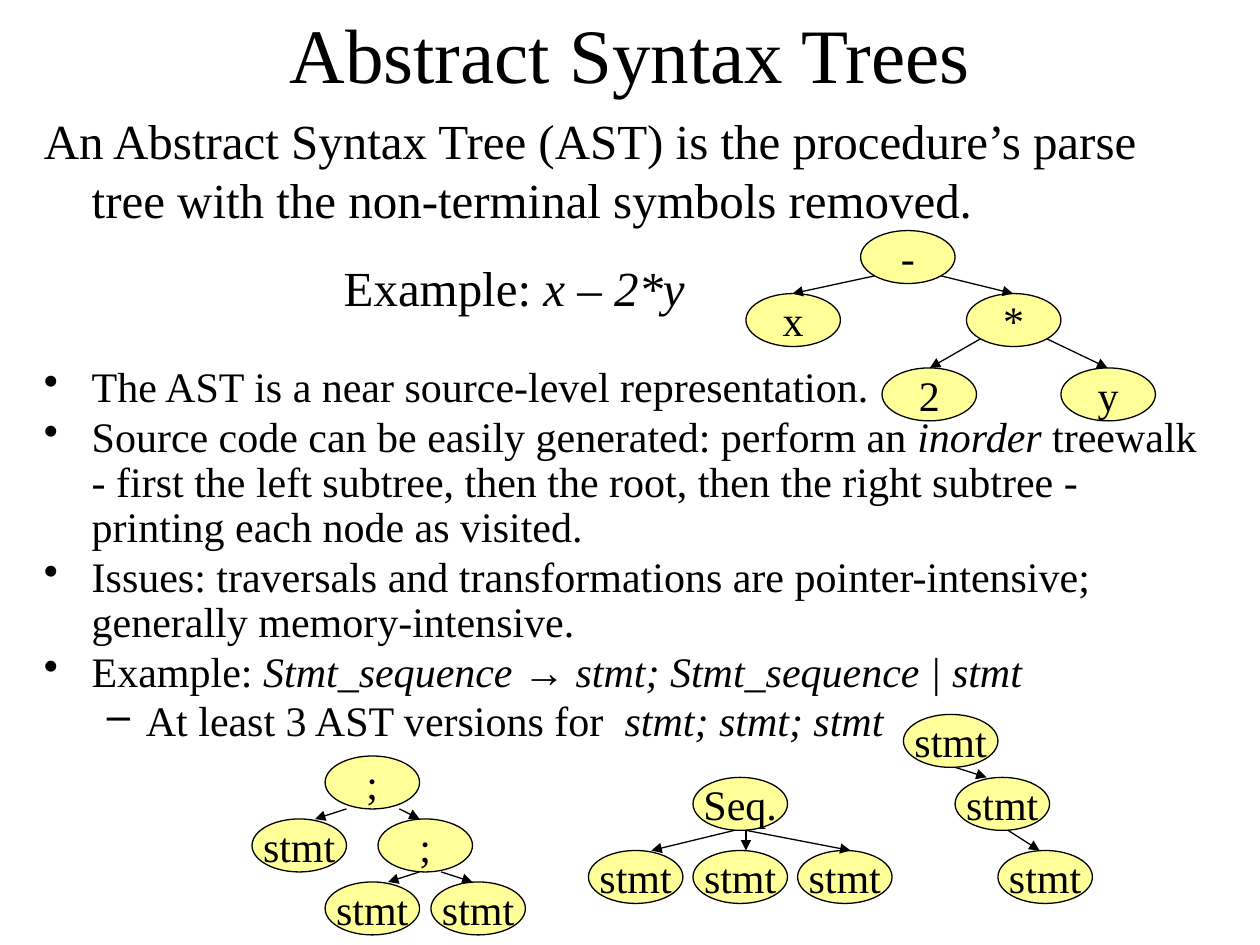
"""Build a slide on abstract syntax trees with four small tree diagrams."""
from dataclasses import dataclass

import pptx
import pptx.dml.color
import pptx.enum.shapes
import pptx.enum.text
import pptx.oxml.ns
import pptx.util
from lxml import etree
from pptx.util import Inches, Pt


@dataclass(frozen=True)
class Theme:
    """Font, colours and type sizes of the slide."""
    font: str = "Times New Roman"
    ink: str = "000000"
    node_fill: str = "FFFF99"
    title: int = 44
    lead: int = 28
    body: int = 24
    line: float = 0.75


@dataclass(frozen=True)
class Tree:
    """Nodes as (label, left, top); edges as (parent, child, start x, end x)."""
    nodes: tuple
    edges: tuple
    inset: float = 0


THEME = Theme()
NODE_WIDTH, NODE_HEIGHT = 0.75, 0.42

TREES = (
    Tree(
        (("-", 6.83, 1.83), ("x", 5.92, 2.33), ("*", 7.67, 2.33),
         ("2", 7, 2.92), ("y", 8.42, 2.92)),
        ((0, 1, 6.94, 6.29), (0, 2, 7.47, 8.04),
         (2, 3, 7.78, 7.38), (2, 4, 8.31, 8.79)),
        inset=0.06,
    ),
    Tree(
        ((";", 2.58, 6), ("stmt", 2, 6.5), (";", 3, 6.5),
         ("stmt", 2.58, 7), ("stmt", 3.42, 7)),
        ((0, 1, 2.75, 2.5), (0, 2, 3.17, 3.33),
         (2, 3, 3.33, 3.08), (2, 4, 3.5, 3.75)),
    ),
    Tree(
        (("Seq.", 5.5, 6.17), ("stmt", 4.67, 6.75),
         ("stmt", 5.5, 6.75), ("stmt", 6.33, 6.75)),
        ((0, 1, 5.83, 5.17), (0, 2, 5.92, 5.92), (0, 3, 5.92, 6.75)),
    ),
    Tree(
        (("stmt", 7.17, 5.67), ("stmt", 7.58, 6.17), ("stmt", 7.92, 6.75)),
        ((0, 1, 7.58, 7.83), (1, 2, 8, 8.25)),
    ),
)

BULLETS = (
    (("The AST is a near source-level representation.", False),),
    (("Source code can be easily generated: perform an ", False),
     ("inorder", True),
     (" treewalk - first the left subtree, then the root, then the right "
      "subtree - printing each node as visited.", False)),
    (("Issues: traversals and transformations are pointer-intensive; "
      "generally memory-intensive.", False),),
    (("Example: ", False),
     ("Stmt_sequence → stmt; Stmt_sequence | stmt", True)),
)


def color(value):
    """Return an RGB colour from its hex digits."""
    return pptx.dml.color.RGBColor.from_string(value)


def style(paragraph, size):
    """Set the theme font, a size and the ink colour on a paragraph."""
    paragraph.font.name = THEME.font
    paragraph.font.size = Pt(size)
    paragraph.font.color.rgb = color(THEME.ink)


def add_box(page, left, top, width, height):
    """Add a wrapping text box and return its text frame."""
    box = page.shapes.add_textbox(
        Inches(left), Inches(top), Inches(width), Inches(height))
    box.text_frame.word_wrap = True
    return box.text_frame


def write(paragraph, spans, size, margin, indent=0, before=0, bullet=None):
    """Fill a paragraph with (text, italic) spans and set its layout."""
    properties = paragraph._p.get_or_add_pPr()
    properties.set("marL", str(Inches(margin)))
    properties.set("indent", str(Inches(indent)))
    paragraph.space_before = Pt(before)
    if bullet:
        paragraph.line_spacing = 0.9
        mark = etree.SubElement(properties, pptx.oxml.ns.qn("a:buChar"))
        mark.set("char", bullet)
    style(paragraph, size)
    for text, italic in spans:
        span = paragraph.add_run()
        span.text = text
        if italic:
            span.font.italic = True


def add_title(page, text):
    """Add the centred slide title."""
    frame = add_box(page, 0.75, 0, 8.5, 0.83)
    frame.vertical_anchor = pptx.enum.text.MSO_ANCHOR.MIDDLE
    paragraph = frame.paragraphs[0]
    paragraph.text = text
    paragraph.alignment = pptx.enum.text.PP_ALIGN.CENTER
    style(paragraph, THEME.title)


def add_body(page):
    """Add the definition, the example and the bulleted list."""
    frame = add_box(page, 0.25, 0.83, 9.5, 5.25)
    definition = ("An Abstract Syntax Tree (AST) is the procedure’s parse tree "
                  "with the non-terminal symbols removed.")
    write(frame.paragraphs[0], ((definition, False),), THEME.lead, 0.38, -0.38)
    write(frame.add_paragraph(), (("Example: ", False), ("x – 2*y", True)),
          THEME.lead, 2.38, before=16.8)
    for number, spans in enumerate(BULLETS):
        write(frame.add_paragraph(), spans, THEME.body, 0.38, -0.38,
              before=2.4 if number else 28.4, bullet="•")
    versions = (("At least 3 AST versions for  ", False),
                ("stmt; stmt; stmt", True))
    paragraph = frame.add_paragraph()
    paragraph.level = 1
    write(paragraph, versions, THEME.body, 0.81, -0.31, 2.4, "–")


def add_node(page, label, left, top):
    """Add one labelled ellipse."""
    node = page.shapes.add_shape(
        pptx.enum.shapes.MSO_SHAPE.OVAL, Inches(left), Inches(top),
        Inches(NODE_WIDTH), Inches(NODE_HEIGHT))
    node.shadow.inherit = False
    node.fill.solid()
    node.fill.fore_color.rgb = color(THEME.node_fill)
    node.line.color.rgb = color(THEME.ink)
    node.line.width = Pt(THEME.line)
    frame = node.text_frame
    frame.word_wrap = False
    frame.vertical_anchor = pptx.enum.text.MSO_ANCHOR.MIDDLE
    paragraph = frame.paragraphs[0]
    paragraph.text = label
    paragraph.alignment = pptx.enum.text.PP_ALIGN.CENTER
    style(paragraph, THEME.body)


def add_arrow(page, start_x, start_y, end_x, end_y):
    """Add a thin straight arrow."""
    arrow = page.shapes.add_connector(
        pptx.enum.shapes.MSO_CONNECTOR.STRAIGHT, Inches(start_x),
        Inches(start_y), Inches(end_x), Inches(end_y))
    arrow.line.color.rgb = color(THEME.ink)
    arrow.line.width = Pt(THEME.line)
    head = etree.SubElement(
        arrow.line._get_or_add_ln(), pptx.oxml.ns.qn("a:tailEnd"))
    head.set("type", "triangle")
    etree.SubElement(arrow._element.spPr, pptx.oxml.ns.qn("a:effectLst"))


def add_tree(page, tree):
    """Add the nodes of a tree and the arrows from parents to children."""
    for label, left, top in tree.nodes:
        add_node(page, label, left, top)
    for parent, child, start_x, end_x in tree.edges:
        start_y = tree.nodes[parent][2] + NODE_HEIGHT - tree.inset
        add_arrow(page, start_x, start_y, end_x, tree.nodes[child][2])


def main():
    """Build and save the deck."""
    deck = pptx.Presentation()
    deck.slide_width, deck.slide_height = Inches(10), Inches(7.5)
    page = deck.slides.add_slide(deck.slide_layouts[6])
    add_title(page, "Abstract Syntax Trees")
    add_body(page)
    for tree in TREES:
        add_tree(page, tree)
    deck.save("out.pptx")


if __name__ == "__main__":
    main()
